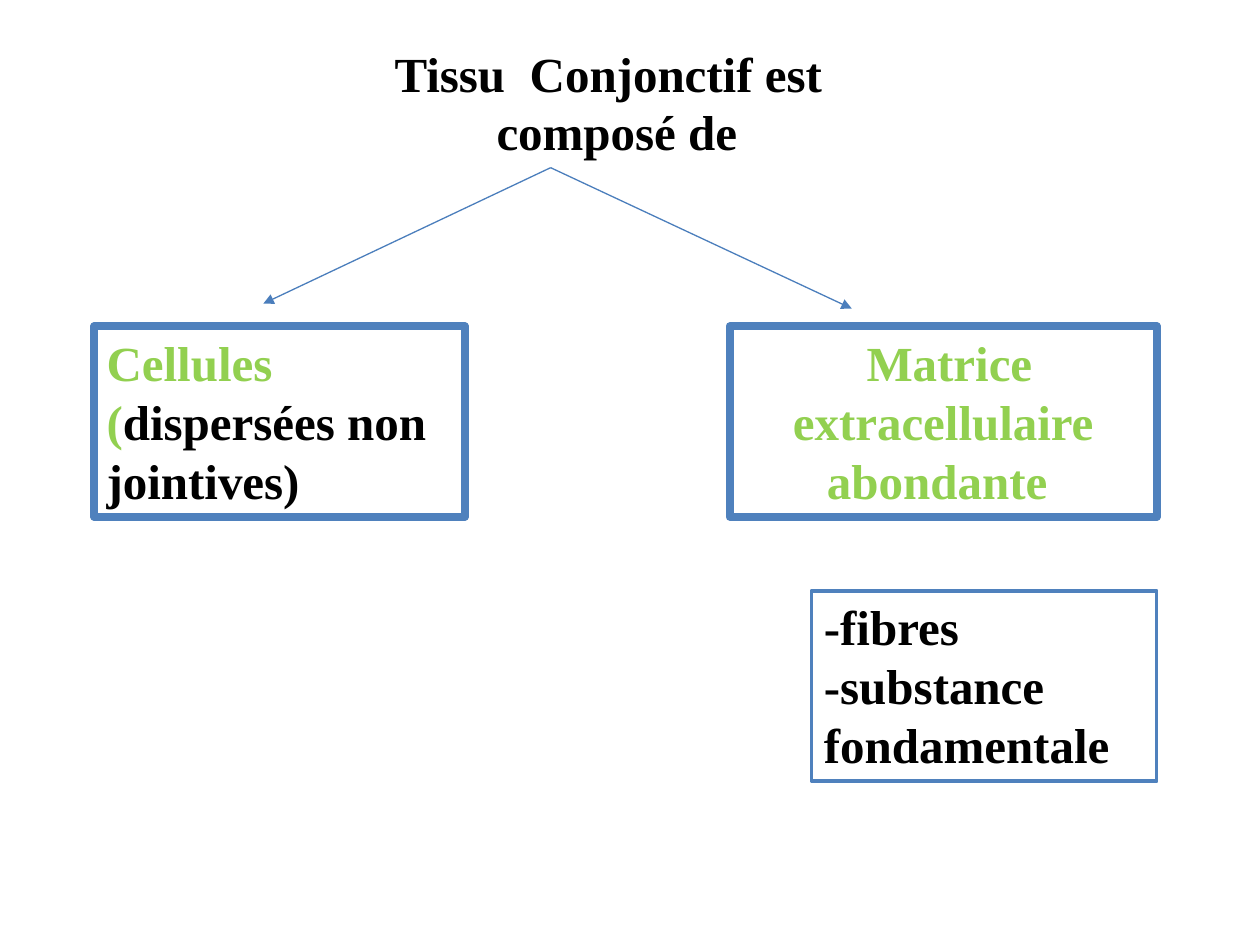
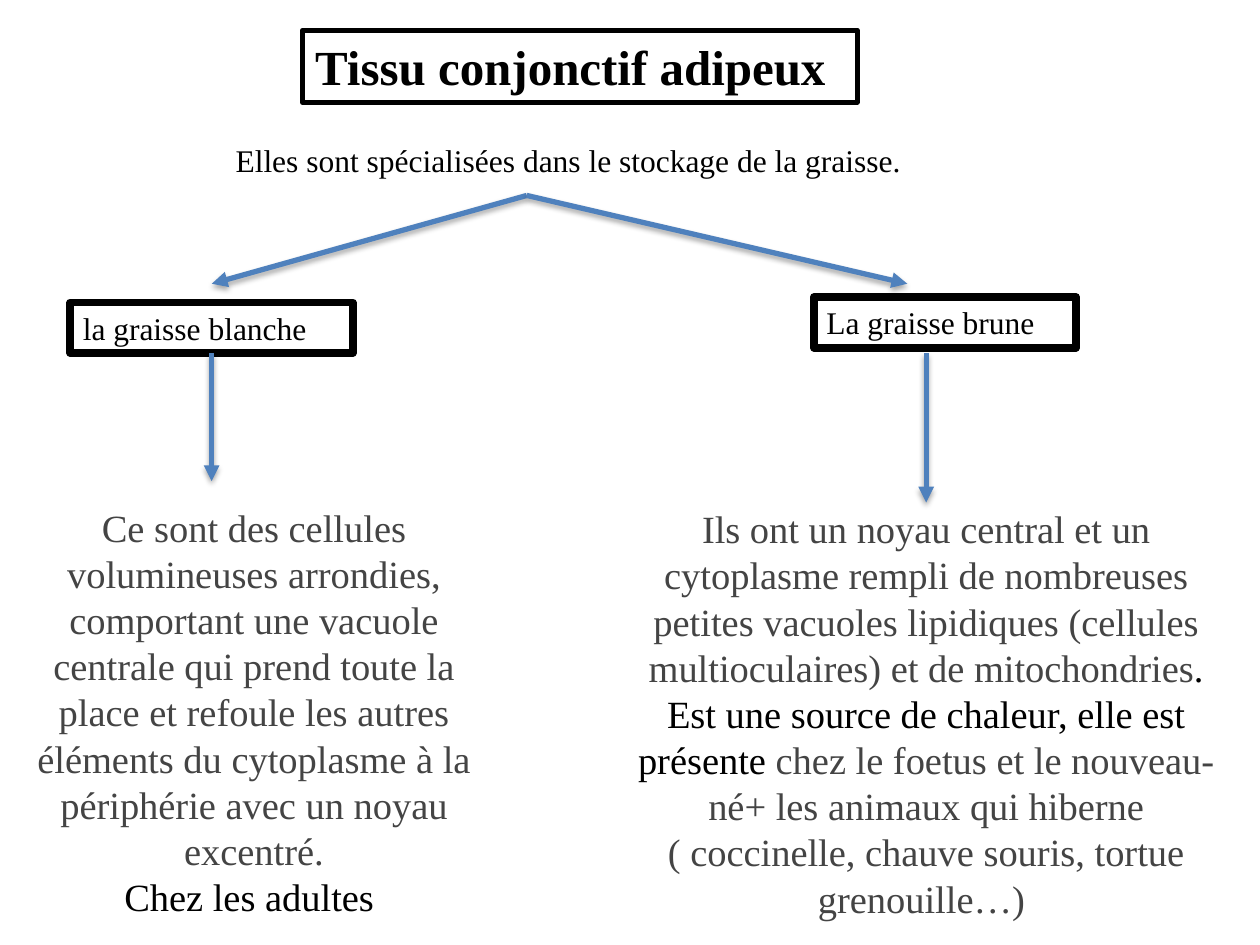
"""Builds two slides about connective tissue and adipose tissue."""

from dataclasses import dataclass
from typing import NamedTuple, Optional

from lxml.etree import SubElement
from pptx import Presentation
from pptx.dml.color import RGBColor
from pptx.enum.shapes import MSO_CONNECTOR, MSO_SHAPE
from pptx.enum.text import MSO_ANCHOR, MSO_AUTO_SIZE, PP_ALIGN
from pptx.oxml.ns import qn
from pptx.util import Cm, Pt

BLACK = RGBColor(0x00, 0x00, 0x00)
WHITE = RGBColor(0xFF, 0xFF, 0xFF)
GRAY = RGBColor(0x44, 0x44, 0x44)
GREEN = RGBColor(0x92, 0xD0, 0x50)
BLUE = RGBColor(0x4F, 0x81, 0xBD)
THIN_BLUE = RGBColor(0x4B, 0x7E, 0xBC)
FONT = "Times New Roman"
LEFT, CENTER = PP_ALIGN.LEFT, PP_ALIGN.CENTER
BOTTOM_SITE = 2


class Span(NamedTuple):
    """A piece of text in one colour."""

    text: str
    color: RGBColor = BLACK


class Line(NamedTuple):
    """A paragraph and its alignment."""

    spans: tuple[Span, ...]
    alignment: PP_ALIGN = LEFT


class Point(NamedTuple):
    """A position in centimetres."""

    x: float
    y: float


@dataclass(frozen=True)
class TextBlock:
    """A block of text, framed when it has an outline; lengths in centimetres."""

    left: float
    top: float
    width: float
    height: float
    lines: tuple[Line, ...]
    size: float
    bold: bool = False
    outline: Optional[RGBColor] = None
    outline_width: float = 4.5


@dataclass(frozen=True)
class ArrowStyle:
    """The look of an arrow."""

    color: RGBColor
    width: float
    shadow: bool


THIN_ARROW = ArrowStyle(THIN_BLUE, 0.75, False)
THICK_ARROW = ArrowStyle(BLUE, 3, True)


def plain(text: str, alignment: PP_ALIGN = LEFT) -> Line:
    """Return a black paragraph."""
    return Line((Span(text),), alignment)


def write_text(shape, block: TextBlock) -> None:
    """Fill the shape's text frame with the block's lines."""
    frame = shape.text_frame
    frame.word_wrap = True
    frame.auto_size = MSO_AUTO_SIZE.NONE
    frame.vertical_anchor = MSO_ANCHOR.TOP
    for index, line in enumerate(block.lines):
        paragraph = frame.add_paragraph() if index else frame.paragraphs[0]
        paragraph.alignment = line.alignment
        paragraph.font.name = FONT
        paragraph.font.size = Pt(block.size)
        paragraph.font.bold = block.bold
        for span in line.spans:
            run = paragraph.add_run()
            run.text = span.text
            run.font.color.rgb = span.color


def format_block(shape, block: TextBlock) -> None:
    """Apply frame and text to a shape."""
    if block.outline is not None:
        shape.fill.solid()
        shape.fill.fore_color.rgb = WHITE
        shape.line.color.rgb = block.outline
        shape.line.width = Pt(block.outline_width)
    write_text(shape, block)


def set_title(slide, block: TextBlock) -> None:
    """Move and format the slide's title placeholder."""
    title = slide.shapes.title
    title.left, title.top = Cm(block.left), Cm(block.top)
    title.width, title.height = Cm(block.width), Cm(block.height)
    format_block(title, block)


def add_block(slide, block: TextBlock):
    """Add a framed rectangle or a bare text box."""
    area = (Cm(block.left), Cm(block.top), Cm(block.width), Cm(block.height))
    if block.outline is None:
        shape = slide.shapes.add_textbox(*area)
    else:
        shape = slide.shapes.add_shape(MSO_SHAPE.RECTANGLE, *area)
        shape.shadow.inherit = False
    format_block(shape, block)
    return shape


def add_arrow(slide, start: Point, end: Point, style: ArrowStyle):
    """Add a straight arrow with a triangular head at its end."""
    arrow = slide.shapes.add_connector(
        MSO_CONNECTOR.STRAIGHT, Cm(start.x), Cm(start.y), Cm(end.x), Cm(end.y)
    )
    arrow.line.color.rgb = style.color
    arrow.line.width = Pt(style.width)
    properties = arrow.line._get_or_add_ln()
    SubElement(properties, qn("a:tailEnd"), type="triangle")
    effects = SubElement(properties.getparent(), qn("a:effectLst"))
    if style.shadow:
        shadow = SubElement(
            effects, qn("a:outerShdw"), blurRad="40000", dist="23000",
            dir="5400000", rotWithShape="0",
        )
        color = SubElement(shadow, qn("a:srgbClr"), val=str(BLACK))
        SubElement(color, qn("a:alpha"), val="35000")
    return arrow


def add_fork(slide, start: Point, ends: tuple[Point, ...], style: ArrowStyle) -> None:
    """Add arrows that spread from one point."""
    for end in ends:
        add_arrow(slide, start, end, style)


def build_composition(slide) -> None:
    """Show what connective tissue is made of."""
    set_title(slide, TextBlock(
        7.7, 0.74, 9.47, 2.64,
        (plain("Tissu  Conjonctif est"), plain("composé de", CENTER)), 28, True,
    ))
    cells = Line((Span("Cellules (", GREEN), Span("dispersées non jointives)")))
    matrix = Line((Span(" "), Span("Matrice extracellulaire abondante ", GREEN)), CENTER)
    contents = (plain("-fibres"), plain("-substance fondamentale"))
    for block in (
        TextBlock(1.9, 6.58, 7.47, 3.84, (cells,), 28, True, BLUE),
        TextBlock(14.71, 6.58, 8.61, 3.84, (matrix,), 28, True, BLUE),
        TextBlock(16.36, 11.91, 6.96, 3.84, contents, 28, True, BLUE, 2),
    ):
        add_block(slide, block)
    add_fork(slide, Point(11.1, 3.38), (Point(5.31, 6.12), Point(17.17, 6.22)), THIN_ARROW)


def build_adipose(slide) -> None:
    """Compare white fat with brown fat."""
    set_title(slide, TextBlock(
        6.1, 0.61, 11.18, 1.45, (plain("Tissu conjonctif adipeux"),), 28, True, BLACK, 3,
    ))
    add_block(slide, TextBlock(
        4.5, 2.72, 17.15, 1.02,
        (plain("Elles sont spécialisées dans le stockage de la graisse."),), 18,
    ))
    add_fork(slide, Point(10.62, 3.94), (Point(4.27, 5.72), Point(18.29, 5.72)), THICK_ARROW)
    white_fat = add_block(slide, TextBlock(
        1.42, 6.1, 5.69, 1.02, (plain("la graisse blanche"),), 18, outline=BLACK,
    ))
    add_block(slide, TextBlock(
        16.41, 5.99, 5.28, 1.02, (plain("La graisse brune"),), 18, outline=BLACK,
    ))
    white_arrow = add_arrow(slide, Point(4.27, 7.12), Point(4.27, 9.7), THICK_ARROW)
    white_arrow.begin_connect(white_fat, BOTTOM_SITE)
    white_arrow.end_x = white_arrow.begin_x
    add_arrow(slide, Point(18.67, 7.12), Point(18.67, 10.13), THICK_ARROW)
    white_cells = Line((Span(
        "Ce sont des cellules volumineuses arrondies, comportant une vacuole centrale "
        "qui prend toute la place et refoule les autres éléments du cytoplasme à la "
        "périphérie avec un noyau excentré.", GRAY,
    ),), CENTER)
    brown_cells = Line((
        Span("Ils ont un noyau central et un cytoplasme rempli de nombreuses petites "
             "vacuoles lipidiques (cellules multioculaires) et de mitochondries", GRAY),
        Span(". Est une source de chaleur, elle est présente "),
        Span("chez le foetus et le nouveau- né+ les animaux qui hiberne "
             "( coccinelle, chauve souris, tortue grenouille…) ", GRAY),
    ), CENTER)
    adults = plain("Chez les adultes ", CENTER)
    add_block(slide, TextBlock(0.18, 10.03, 9.88, 8.71, (white_cells, adults), 22))
    add_block(slide, TextBlock(12.32, 10.06, 12.7, 8.71, (brown_cells,), 22))


def main() -> None:
    """Build and save the presentation."""
    presentation = Presentation()
    presentation.slide_width, presentation.slide_height = Cm(25.4), Cm(19.05)
    title_only = presentation.slide_layouts.get_by_name("Title Only")
    for build in (build_composition, build_adipose):
        build(presentation.slides.add_slide(title_only))
    presentation.save("out.pptx")


if __name__ == "__main__":
    main()
